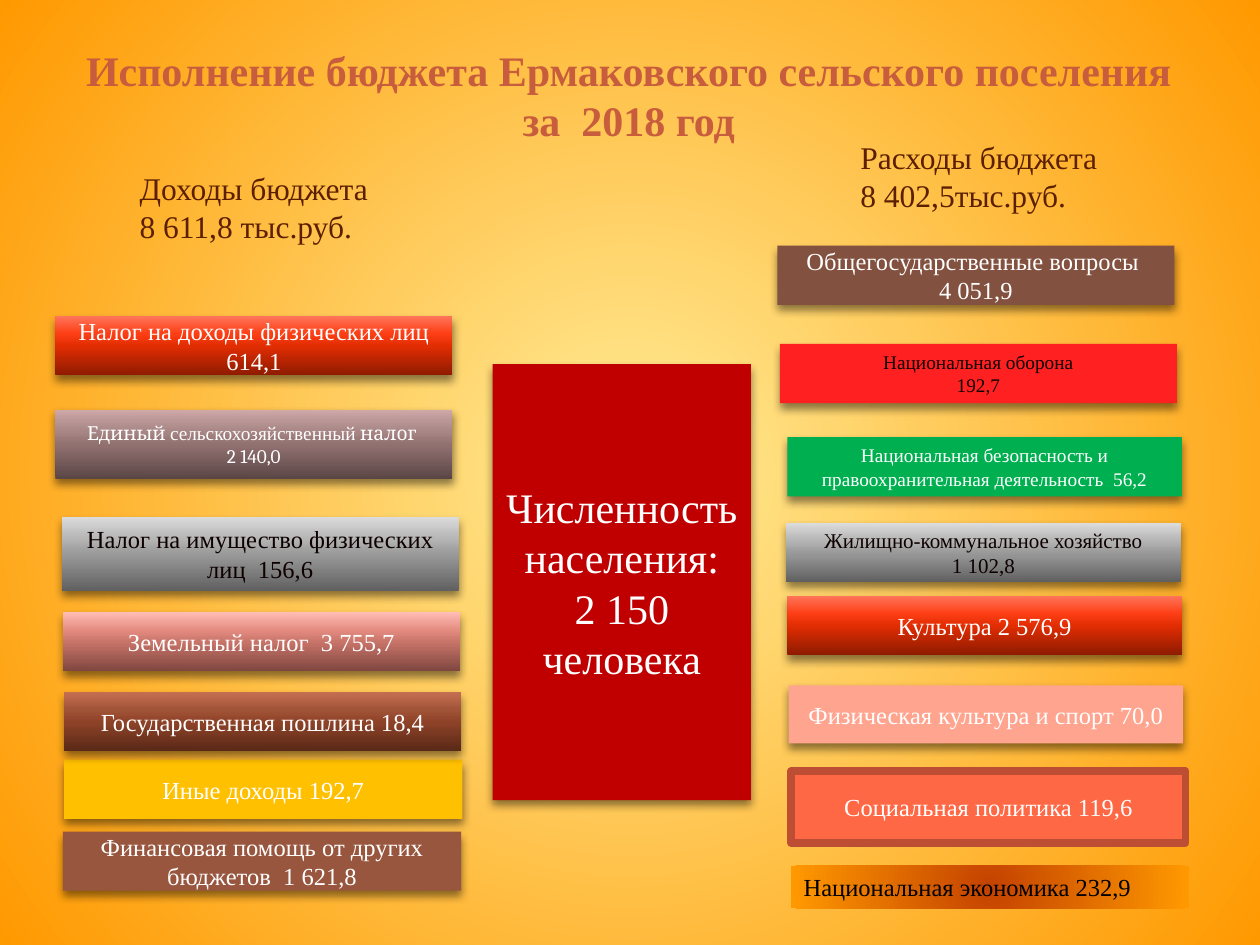
from dataclasses import dataclass

from lxml.etree import SubElement
from pptx import Presentation
from pptx.dml.color import RGBColor
from pptx.enum.shapes import MSO_SHAPE
from pptx.enum.text import MSO_ANCHOR, PP_ALIGN
from pptx.oxml import parse_xml
from pptx.oxml.ns import nsdecls, qn
from pptx.util import Inches, Pt

SERIF = "Times New Roman"
WHITE = "FFFFFF"
DARK = "0E0000"
BROWN = "5C1F00"

# Gradients run from bottom to top
STOPS = (0, 50, 70, 100)
RED = ("8E1B00", "E22D03", "FD3E15", "FF755A")
MAUVE = ("5B4646", "927171", "AA8888", "CFA8A8")
GREY = ("606060", "9A9A9A", "B5B5B5", "DCDCDC")
PINK = ("7E463F", "C87469", "E58C81", "FFBDB5")
COPPER = ("5A2917", "8F4328", "A25438", "C56F52")


@dataclass
class Bar:
    text: str
    left: float
    top: float
    width: float
    height: float
    fill: str | tuple
    size: float = 14
    color: str = WHITE
    font: str = SERIF
    shadow: bool = True


INCOME_BARS = [
    Bar("Налог на доходы физических лиц 614,1", 0.44, 2.51, 3.15, 0.47, RED),
    Bar("Налог на имущество физических лиц  156,6", 0.49, 4.1, 3.15, 0.59, GREY, color=DARK),
    Bar("Финансовая помощь от других бюджетов  1 621,8", 0.5, 6.6, 3.16, 0.47, "98563E"),
    Bar("Иные доходы 192,7", 0.51, 6.03, 3.16, 0.47, "FFC000"),
    Bar("Государственная пошлина 18,4", 0.51, 5.49, 3.15, 0.47, COPPER),
    Bar("Земельный налог  3 755,7", 0.5, 4.86, 3.15, 0.47, PINK),
]
FARM_TAX_BAR = Bar("Единый \n2 140,0", 0.44, 3.25, 3.15, 0.55, MAUVE, 11, font="Cambria")
EXPENSE_BARS = [
    Bar("Общегосударственные вопросы \n4 051,9", 6.17, 1.95, 3.15, 0.47, "825140"),
    Bar("Национальная оборона\n192,7", 6.19, 2.73, 3.15, 0.47, "FF2121", 11, DARK),
    Bar("Физическая культура и спорт 70,0", 6.26, 5.44, 3.13, 0.46, "FFA48F"),
    Bar("Культура 2 576,9", 6.25, 4.73, 3.13, 0.47, RED),
    Bar("Национальная безопасность и правоохранительная деятельность  56,2",
        6.25, 3.47, 3.13, 0.47, "00B050", 11),
    Bar("Жилищно-коммунальное хозяйство\n1 102,8", 6.24, 4.15, 3.13, 0.47, GREY, 12, DARK),
]
POPULATION_BAR = Bar("Численность населения:\n2 150\nчеловека", 3.91, 2.89, 2.05, 3.46, "C00000", 24)
SOCIAL_BAR = Bar("Социальная политика 119,6", 6.28, 6.12, 3.13, 0.57, "FF6845", shadow=False)
ECONOMY_BAR = Bar("Национальная экономика 232,9", 6.28, 6.87, 3.16, 0.34,
                  ("C44200", "FF9900"), color="000000", shadow=False)


def rgb(value: str) -> RGBColor:
    return RGBColor.from_string(value)


def set_gradient(fill, parent, colors: tuple) -> None:
    """Fill with a radial gradient for two colours, else a vertical one."""
    fill.solid()
    if len(colors) == 2:
        stops = (0, 100)
        direction = ('<a:path path="circle"><a:fillToRect l="50000" t="50000" '
                     'r="50000" b="50000"/></a:path>')
    else:
        stops = STOPS
        direction = '<a:lin ang="16200000" scaled="0"/>'
    marks = "".join(
        f'<a:gs pos="{stop * 1000}"><a:srgbClr val="{color}"/></a:gs>'
        for stop, color in zip(stops, colors))
    gradient = parse_xml(f'<a:gradFill {nsdecls("a")} rotWithShape="1">'
                         f'<a:gsLst>{marks}</a:gsLst>{direction}</a:gradFill>')
    parent.replace(parent.find(qn("a:solidFill")), gradient)


def add_shadow(shape) -> None:
    effects = shape._element.spPr.find(qn("a:effectLst"))
    shadow = SubElement(effects, qn("a:outerShdw"), blurRad=str(Pt(5)), dist=str(Pt(3)),
                        dir="5400000", rotWithShape="0")
    color = SubElement(shadow, qn("a:srgbClr"), val="000000")
    SubElement(color, qn("a:alpha"), val="45000")


def format_span(span, size: float, color: str, font: str = SERIF, bold: bool = False) -> None:
    span.font.size = Pt(size)
    span.font.name = font
    span.font.bold = bold
    span.font.color.rgb = rgb(color)


def write_text(shape, text: str, align: PP_ALIGN, size: float, color: str,
               font: str = SERIF, bold: bool = False) -> None:
    frame = shape.text_frame
    frame.word_wrap = True
    frame.text = text
    for para in frame.paragraphs:
        para.alignment = align
        for span in para.runs:
            format_span(span, size, color, font, bold)


def draw_bar(page, bar: Bar):
    shape = page.shapes.add_shape(MSO_SHAPE.RECTANGLE, Inches(bar.left), Inches(bar.top),
                                  Inches(bar.width), Inches(bar.height))
    shape.shadow.inherit = False
    shape.line.fill.background()
    if isinstance(bar.fill, tuple):
        set_gradient(shape.fill, shape._element.spPr, bar.fill)
    else:
        shape.fill.solid()
        shape.fill.fore_color.rgb = rgb(bar.fill)
    if bar.shadow:
        add_shadow(shape)
    shape.text_frame.vertical_anchor = MSO_ANCHOR.MIDDLE
    write_text(shape, bar.text, PP_ALIGN.CENTER, bar.size, bar.color, bar.font)
    return shape


def draw_label(page, text: str, left: float, top: float, width: float, height: float,
               align: PP_ALIGN, size: float, color: str, bold: bool = False) -> None:
    box = page.shapes.add_textbox(Inches(left), Inches(top), Inches(width), Inches(height))
    write_text(box, text, align, size, color, bold=bold)


def main() -> None:
    deck = Presentation()
    deck.slide_width, deck.slide_height = Inches(10), Inches(7.5)
    page = deck.slides.add_slide(deck.slide_layouts[6])

    # Background
    background_fill = page.background.fill
    background_fill.solid()
    set_gradient(background_fill, page._element.cSld.bg.bgPr, ("FFEC97", "FF9900"))

    # Column headings
    draw_label(page, "Доходы бюджета\n8 611,8 тыс.руб.", 1.01, 1.29, 2.17, 0.71,
               PP_ALIGN.LEFT, 18, BROWN)
    draw_label(page, "Расходы бюджета\n8 402,5тыс.руб.", 6.73, 1.05, 3.08, 0.94,
               PP_ALIGN.LEFT, 18, BROWN)

    # Income, expenses and population
    for bar in INCOME_BARS + EXPENSE_BARS + [POPULATION_BAR]:
        draw_bar(page, bar)

    # Farm tax, with one word in another font
    farm_tax = draw_bar(page, FARM_TAX_BAR)
    para = farm_tax.text_frame.paragraphs[0]
    for text, font in (("сельскохозяйственный", SERIF), (" налог ", FARM_TAX_BAR.font)):
        span = para.add_run()
        span.text = text
        format_span(span, FARM_TAX_BAR.size, FARM_TAX_BAR.color, font)

    # Title
    draw_label(page, "Исполнение бюджета Ермаковского сельского поселения за  2018 год",
               0.54, 0.3, 8.9, 0.91, PP_ALIGN.CENTER, 24, "C75D3C", bold=True)

    # Outlined social policy bar
    social = draw_bar(page, SOCIAL_BAR)
    social.line.color.rgb = rgb("BD4D33")
    social.line.width = Pt(4.33)

    # Left-aligned economy bar
    economy = draw_bar(page, ECONOMY_BAR)
    economy.text_frame.vertical_anchor = MSO_ANCHOR.TOP
    economy.text_frame.paragraphs[0].alignment = PP_ALIGN.LEFT

    deck.save("out.pptx")


if __name__ == "__main__":
    main()
